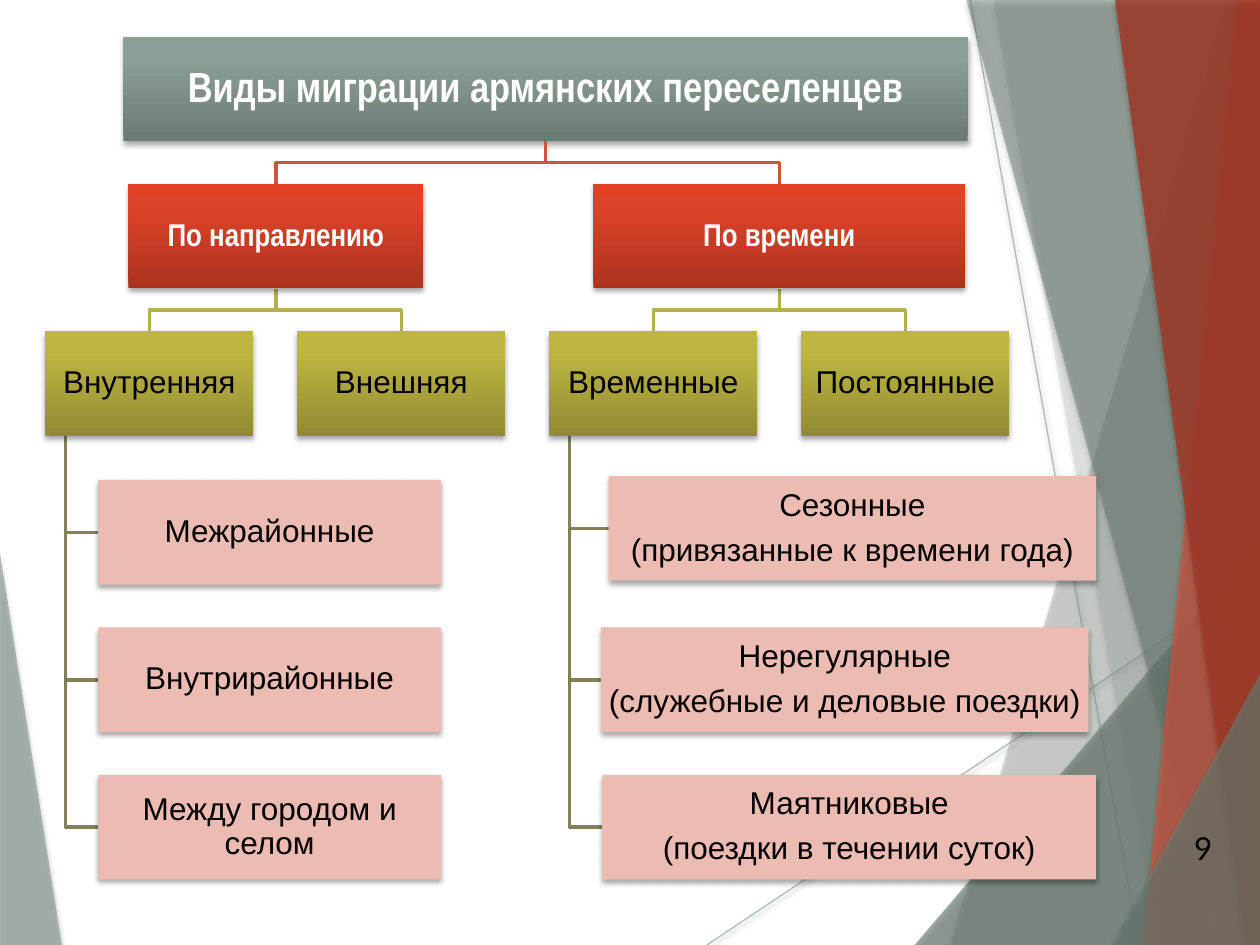
from copy import deepcopy

from lxml import etree
from pptx import Presentation
from pptx.dml.color import RGBColor
from pptx.enum.shapes import MSO_CONNECTOR, MSO_SHAPE
from pptx.enum.text import MSO_ANCHOR, MSO_AUTO_SIZE, PP_ALIGN
from pptx.oxml.ns import qn
from pptx.util import Inches, Pt

STRAIGHT, RECT = MSO_CONNECTOR.STRAIGHT, MSO_SHAPE.RECTANGLE
MIDDLE, NO_FIT = MSO_ANCHOR.MIDDLE, MSO_AUTO_SIZE.NONE
CENTER, RIGHT = PP_ALIGN.CENTER, PP_ALIGN.RIGHT

COLORS = {
    "sage": "93A299", "moss": "6B7D72", "coral": "CF543F", "brick": "A23A28",
    "olive": "B5AE53", "khaki": "848058", "pink": "ECBBB2",
    "white": "FFFFFF", "black": "000000",
}
GRADIENTS = {
    "title": ("6C7B72", "8C9F94", "8DA094"),
    "basis": ("AB331F", "DD4328", "E24025"),
    "kind": ("928B33", "BEB542", "C1B840"),
}
STOPS = (0, 0.8, 1)

TITLE = ("Виды миграции армянских переселенцев", 0.98, 6.7)
# text, left, width, kinds; kind: text, left, forms; form: lines, left, width, rise
BASES = [
    ("По направлению", 1.02, 2.34, [
        ("Внутренняя", 0.36, [
            (["Межрайонные"], 0.78, 2.72, 0),
            (["Внутрирайонные"], 0.78, 2.72, 0),
            (["Между городом и селом"], 0.78, 2.72, 0),
        ]),
        ("Внешняя", 2.36, []),
    ]),
    ("По времени", 4.71, 2.95, [
        ("Временные", 4.36, [
            (["Сезонные", "(привязанные к времени года)"], 4.83, 3.87, 0.03),
            (["Нерегулярные", "(служебные и деловые поездки)"], 4.77, 3.87, 0),
            (["Маятниковые", "(поездки в течении суток)"], 4.78, 3.92, 0),
        ]),
        ("Постоянные", 6.36, []),
    ]),
]
TITLE_TOP, BASIS_TOP, KIND_TOP = 0.29, 1.46, 2.63
FORM_TOPS = (3.81, 4.98, 6.15)
BOX_HEIGHT, KIND_WIDTH, STEM_INDENT = 0.83, 1.65, 0.16

RAYS = [((5.61, 7.5), (10, 4.57)), ((7.7, 0), (9.04, 7.5))]
LEFT_FACET = ("sage", 70, [(0, 4.39), (0.49, 7.5), (0, 7.5)])
RIGHT_FACETS = [
    ("sage", 36, [(9.75, 0), (7.54, 7.5), (10, 7.5), (10, 0)]),
    ("sage", 20, [(7.88, 0), (9.19, 7.5), (10, 7.5), (10, 0)]),
    ("moss", 66, [(7.26, 7.5), (10, 4.29), (10, 7.5)]),
    ("moss", 50, [(7.67, 0), (9.7, 7.5), (10, 7.5), (10, 0)]),
    ("coral", 70, [(9.81, 0), (9.07, 7.5), (10, 7.5), (10, 0)]),
    ("brick", 82, [(8.85, 0), (9.88, 7.5), (10, 7.5), (10, 0)]),
    ("moss", 66, [(8.82, 7.5), (10, 5.35), (10, 7.5)]),
]


def rgb(name):
    return RGBColor.from_string(COLORS[name])


def set_alpha(parent, percent):
    color = next(parent.iter(qn("a:srgbClr")))
    etree.SubElement(color, qn("a:alpha"), val=str(percent * 1000))


def set_effects(shape, shadow=None):
    effects = etree.SubElement(shape._element.spPr, qn("a:effectLst"))
    if shadow:
        alpha, blur, distance = shadow
        outer = etree.SubElement(
            effects, qn("a:outerShdw"), blurRad=str(Pt(blur)), dist=str(Pt(distance)),
            dir="5400000", algn="ctr", rotWithShape="0")
        etree.SubElement(outer, qn("a:srgbClr"), val=COLORS["black"])
        set_alpha(outer, alpha)


def add_outline(slide, points, close):
    corners = [(Inches(x), Inches(y)) for x, y in points]
    builder = slide.shapes.build_freeform(*corners[0])
    builder.add_line_segments(corners[1:], close=close)
    return builder.convert_to_shape()


def add_facet(slide, color, opacity, points):
    facet = add_outline(slide, points, True)
    facet.fill.solid()
    facet.fill.fore_color.rgb = rgb(color)
    set_alpha(facet._element.spPr, opacity)
    facet.line.fill.background()
    set_effects(facet, (35, 3, 2))


def add_ray(slide, start, end):
    ray = slide.shapes.add_connector(STRAIGHT, *map(Inches, start + end))
    ray.line.color.rgb = rgb("sage")
    ray.line.width = Pt(0.75)
    set_alpha(ray._element.spPr, 70)
    set_effects(ray, (38, 3.1, 1.6))


def add_branch(slide, color, points):
    branch = add_outline(slide, points, False)
    branch.fill.background()
    branch.line.color.rgb = rgb(color)
    branch.line.width = Pt(2)
    set_effects(branch)


def add_fork(slide, color, parent_x, child_x, child_top, parent_top):
    bottom = parent_top + BOX_HEIGHT
    middle = (bottom + child_top) / 2
    add_branch(slide, color, [(parent_x, bottom), (parent_x, middle),
                              (child_x, middle), (child_x, child_top)])


def write(shape, lines, size, font, color, bold=False, align=CENTER, inset=0.01):
    frame = shape.text_frame
    frame.text = "\n".join(lines)
    frame.word_wrap = True
    frame.auto_size = NO_FIT
    frame.vertical_anchor = MIDDLE
    frame.margin_left = frame.margin_right = Inches(inset)
    frame.margin_top = frame.margin_bottom = Inches(inset)
    for paragraph in frame.paragraphs:
        paragraph.alignment = align
        paragraph.line_spacing = 0.9
        paragraph.space_before = Pt(0)
        paragraph.space_after = Pt(size * 0.35)
        paragraph.font.size = Pt(size)
        paragraph.font.name = font
        paragraph.font.bold = bold
        paragraph.font.color.rgb = rgb(color)


def style_box(box, gradient=None):
    if gradient:
        box.fill.gradient()
        box.fill.gradient_angle = 90
        stop_list = next(box._element.spPr.iter(qn("a:gsLst")))
        stop_list.append(deepcopy(stop_list[-1]))
        for stop, place, color in zip(box.fill.gradient_stops, STOPS, GRADIENTS[gradient]):
            stop.position = place
            stop.color.rgb = RGBColor.from_string(color)
    else:
        box.fill.solid()
        box.fill.fore_color.rgb = rgb("pink")
    box.line.fill.background()
    set_effects(box, (35, 3.1, 1.8))


def add_box(slide, lines, left, top, width, gradient=None):
    box = slide.shapes.add_shape(RECT, *map(Inches, (left, top, width, BOX_HEIGHT)))
    style_box(box, gradient)
    if gradient == "basis":
        write(box, lines, 18, "Arial Narrow", "white", bold=True)
    else:
        write(box, lines, 18, "Arial", "black")


def add_title(slide):
    text, left, width = TITLE
    title = slide.shapes.title
    title.left, title.top = Inches(left), Inches(TITLE_TOP)
    title.width, title.height = Inches(width), Inches(BOX_HEIGHT)
    style_box(title, "title")
    write(title, [text], 24, "Arial Narrow", "white", bold=True, inset=0.02)


def add_tree(slide):
    title_x = TITLE[1] + TITLE[2] / 2
    for basis, basis_left, basis_width, kinds in BASES:
        basis_x = basis_left + basis_width / 2
        add_fork(slide, "coral", title_x, basis_x, BASIS_TOP, TITLE_TOP)
        for kind, kind_left, forms in kinds:
            add_fork(slide, "olive", basis_x, kind_left + KIND_WIDTH / 2, KIND_TOP, BASIS_TOP)
            stem_x = kind_left + STEM_INDENT
            for (lines, left, width, rise), row_top in zip(forms, FORM_TOPS):
                top = row_top - rise
                middle = top + BOX_HEIGHT / 2
                add_branch(slide, "khaki", [(stem_x, KIND_TOP + BOX_HEIGHT),
                                            (stem_x, middle), (left, middle)])
                add_box(slide, lines, left, top, width)
            add_box(slide, [kind], kind_left, KIND_TOP, KIND_WIDTH, "kind")
        add_box(slide, [basis], basis_left, BASIS_TOP, basis_width, "basis")


def main():
    """Build the slide on the kinds of migration of Armenian settlers."""
    deck = Presentation()
    deck.slide_width, deck.slide_height = Inches(10), Inches(7.5)
    slide = deck.slides.add_slide(deck.slide_layouts[5])
    add_facet(slide, *LEFT_FACET)
    for start, end in RAYS:
        add_ray(slide, start, end)
    for facet in RIGHT_FACETS:
        add_facet(slide, *facet)
    add_title(slide)
    add_tree(slide)
    page = slide.shapes.add_textbox(*map(Inches, (9.09, 6.43, 0.63, 0.64)))
    write(page, ["9"], 18, "Lato", "black", align=RIGHT, inset=0.1)
    deck.save("out.pptx")


if __name__ == "__main__":
    main()
